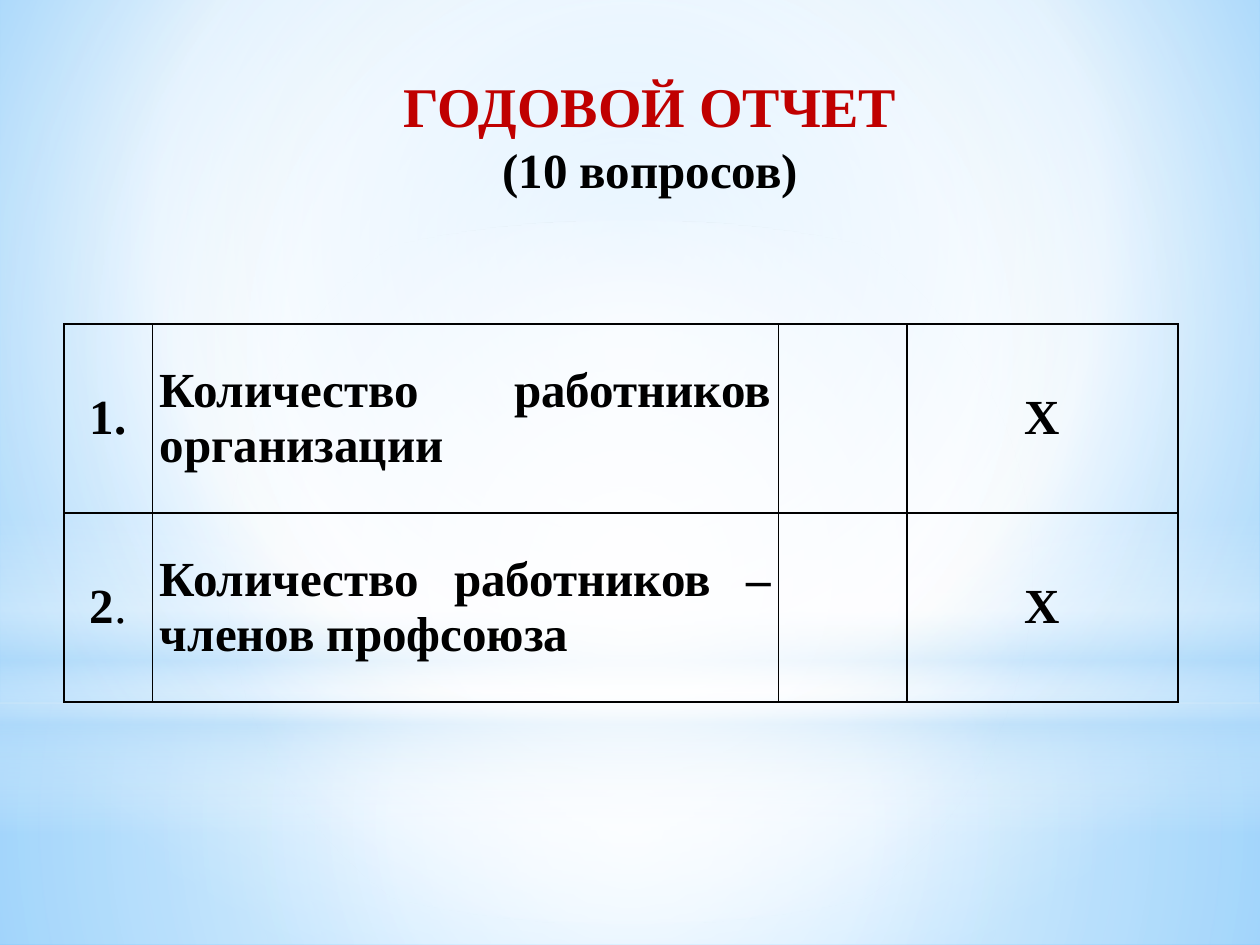
"""Build the annual report slide with its table of questions."""
from dataclasses import dataclass

from lxml.etree import SubElement
from pptx import Presentation
from pptx.dml.color import RGBColor
from pptx.enum.shapes import MSO_SHAPE
from pptx.enum.text import MSO_ANCHOR, MSO_AUTO_SIZE, PP_ALIGN
from pptx.oxml import parse_xml
from pptx.oxml.ns import nsdecls, qn
from pptx.util import Inches, Pt


@dataclass(frozen=True)
class Theme:
    """Colours, font and type sizes of the slide."""
    font: str = "Times New Roman"
    heading: str = "C00000"
    text: str = "000000"
    white: str = "FFFFFF"
    pale: str = "B4DCFA"
    sky: str = "9ED5FF"
    deep: str = "5BB9FF"
    heading_size: int = 32
    text_size: int = 28
    border_width: int = 1


THEME = Theme()
CENTRE = (50, 50, 50, 50)
ROWS = [
    (["1."], "Количество работников организации", "", "Х"),
    (["2", "."], "Количество работников – членов профсоюза", "", "Х"),
]
COLUMN_WIDTHS = (0.7, 4.97, 1.02, 2.15)
COLUMN_ALIGNMENTS = (PP_ALIGN.CENTER, PP_ALIGN.JUSTIFY, PP_ALIGN.CENTER, PP_ALIGN.CENTER)
ROW_HEIGHT = 1.5


def set_gradient(fill, holder, stops, focus=None):
    """Give a fill a circular gradient around focus, or a vertical one."""
    fill.gradient()
    stop_xml = "".join(
        f'<a:gs pos="{position * 1000}"><a:srgbClr val="{colour}">'
        f'<a:alpha val="{opacity * 1000}"/></a:srgbClr></a:gs>'
        for position, colour, opacity in stops)
    if focus:
        sides = " ".join(f'{side}="{value * 1000}"' for side, value in zip("ltrb", focus))
        direction = f'<a:path path="circle"><a:fillToRect {sides}/></a:path>'
    else:
        direction = '<a:lin ang="5400000" scaled="0"/>'
    gradient = parse_xml(
        f'<a:gradFill {nsdecls("a")} rotWithShape="1">'
        f'<a:gsLst>{stop_xml}</a:gsLst>{direction}</a:gradFill>')
    holder.replace(holder.find(qn("a:gradFill")), gradient)


def set_background(slide):
    """Fill the slide background with the sky gradient."""
    fill = slide.background.fill
    fill.gradient()
    holder = slide.element.find(f".//{qn('p:bgPr')}")
    stops = [(0, THEME.sky, 100), (60, THEME.white, 100), (100, THEME.deep, 100)]
    set_gradient(fill, holder, stops, (20, 10, 20, 60))


def add_glow(slide, kind, top, height, stops, focus=CENTRE):
    """Add a full-width translucent gradient shape."""
    shape = slide.shapes.add_shape(kind, 0, Inches(top), Inches(10), Inches(height))
    shape.shadow.inherit = False
    shape.line.fill.background()
    set_gradient(shape.fill, shape.element.spPr, stops, focus)


def add_backdrop(slide):
    """Layer the floor, wall, horizon and central light."""
    white, pale = THEME.white, THEME.pale
    add_glow(slide, MSO_SHAPE.RECTANGLE, 5.58, 1.92,
             [(0, white, 91), (37, white, 76), (100, pale, 79)])
    add_glow(slide, MSO_SHAPE.RECTANGLE, 0, 5.58,
             [(0, white, 89), (48, white, 62), (100, pale, 79)])
    add_glow(slide, MSO_SHAPE.RECTANGLE, 4.12, 2.5,
             [(0, white, 0), (29, white, 30), (45, pale, 40),
              (55, white, 26), (65, pale, 60), (100, white, 0)], None)
    add_glow(slide, MSO_SHAPE.OVAL, 1.75, 5.58, [(0, white, 100), (56, white, 0)])


def format_font(font, size, colour, bold=True):
    """Apply the theme font with a size, colour and weight."""
    font.name = THEME.font
    font.size = Pt(size)
    font.bold = bold
    font.color.rgb = RGBColor.from_string(colour)


def add_title(slide):
    """Place the two-line title in front of the backdrop."""
    title = slide.shapes.title
    title.left, title.top = Inches(0.83), Inches(0.52)
    title.width, title.height = Inches(8.66), Inches(1.11)
    text_frame = title.text_frame
    text_frame.text = "ГОДОВОЙ ОТЧЕТ\n(10 вопросов)"
    text_frame.vertical_anchor = MSO_ANCHOR.TOP
    text_frame.auto_size = MSO_AUTO_SIZE.SHAPE_TO_FIT_TEXT
    styles = [(THEME.heading_size, THEME.heading), (THEME.text_size, THEME.text)]
    for paragraph, (size, colour) in zip(text_frame.paragraphs, styles):
        paragraph.alignment = PP_ALIGN.CENTER
        format_font(paragraph.runs[0].font, size, colour)
    title.element.getparent().append(title.element)


def set_borders(cell):
    """Draw a thin line on every side of a cell."""
    properties = cell._tc.get_or_add_tcPr()
    for side in ("lnL", "lnR", "lnT", "lnB"):
        line = SubElement(properties, qn(f"a:{side}"), w=str(Pt(THEME.border_width)))
        fill = SubElement(line, qn("a:solidFill"))
        SubElement(fill, qn("a:srgbClr"), val=THEME.text)


def fill_cell(cell, content, alignment):
    """Write a cell; runs after the first are not bold."""
    set_borders(cell)
    cell.fill.background()
    cell.vertical_anchor = MSO_ANCHOR.MIDDLE
    cell.margin_left = cell.margin_right = Inches(0.06)
    cell.margin_top = cell.margin_bottom = 0
    paragraph = cell.text_frame.paragraphs[0]
    paragraph.alignment = alignment
    parts = [content] if isinstance(content, str) else content
    for index, part in enumerate(filter(None, parts)):
        run = paragraph.add_run()
        run.text = part
        format_font(run.font, THEME.text_size, THEME.text, bold=index == 0)


def add_question_table(slide):
    """Add the table of numbered questions."""
    table = slide.shapes.add_table(
        len(ROWS), len(COLUMN_WIDTHS), Inches(0.51), Inches(2.57),
        Inches(sum(COLUMN_WIDTHS)), Inches(ROW_HEIGHT * len(ROWS))).table
    table.first_row = table.horz_banding = False
    for column, width in zip(table.columns, COLUMN_WIDTHS):
        column.width = Inches(width)
    for row, contents in zip(table.rows, ROWS):
        row.height = Inches(ROW_HEIGHT)
        for cell, content, alignment in zip(row.cells, contents, COLUMN_ALIGNMENTS):
            fill_cell(cell, content, alignment)


def main():
    """Build and save the presentation."""
    presentation = Presentation()
    presentation.slide_width, presentation.slide_height = Inches(10), Inches(7.5)
    slide = presentation.slides.add_slide(presentation.slide_layouts[5])
    set_background(slide)
    add_backdrop(slide)
    add_question_table(slide)
    add_title(slide)
    presentation.save("out.pptx")


if __name__ == "__main__":
    main()
